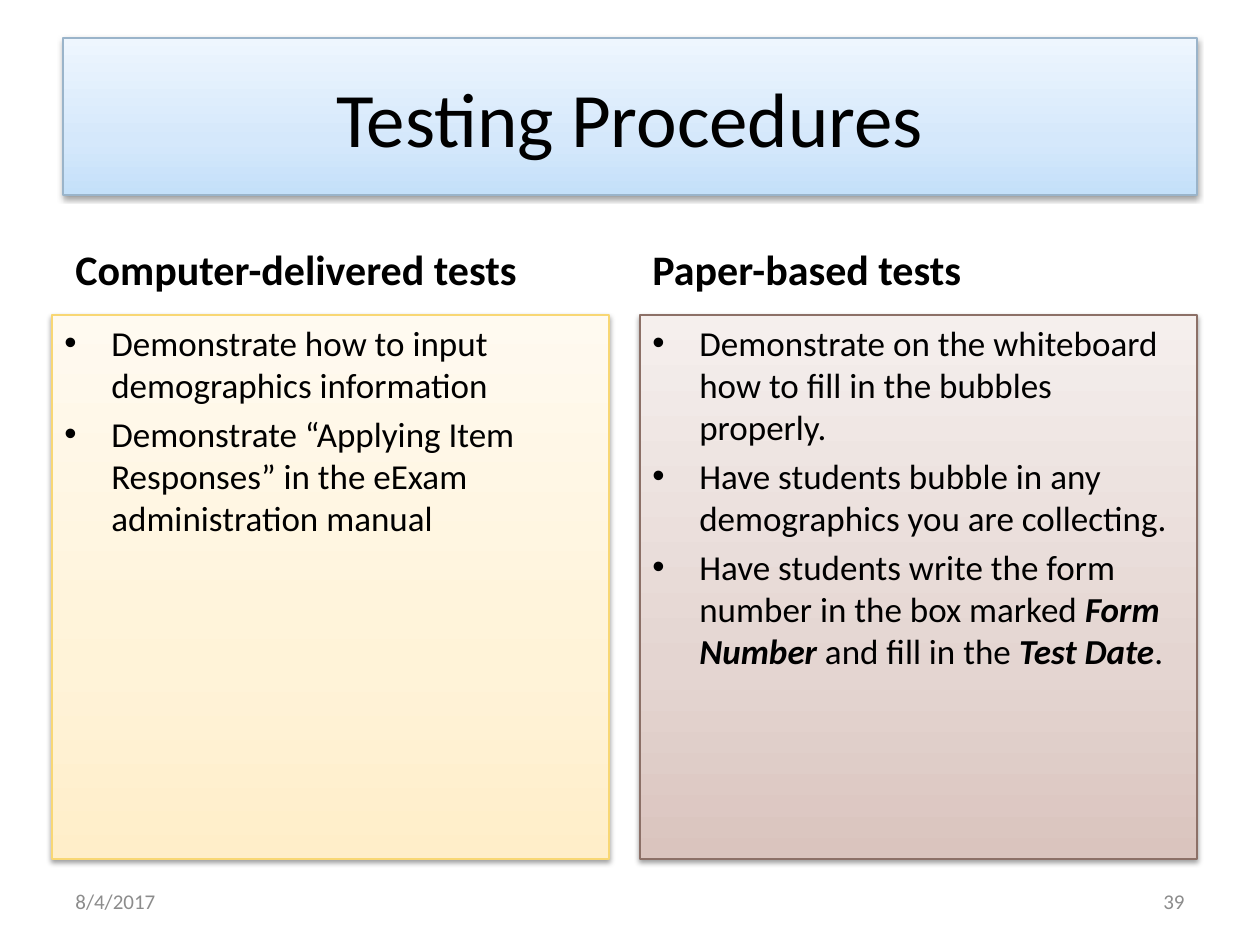
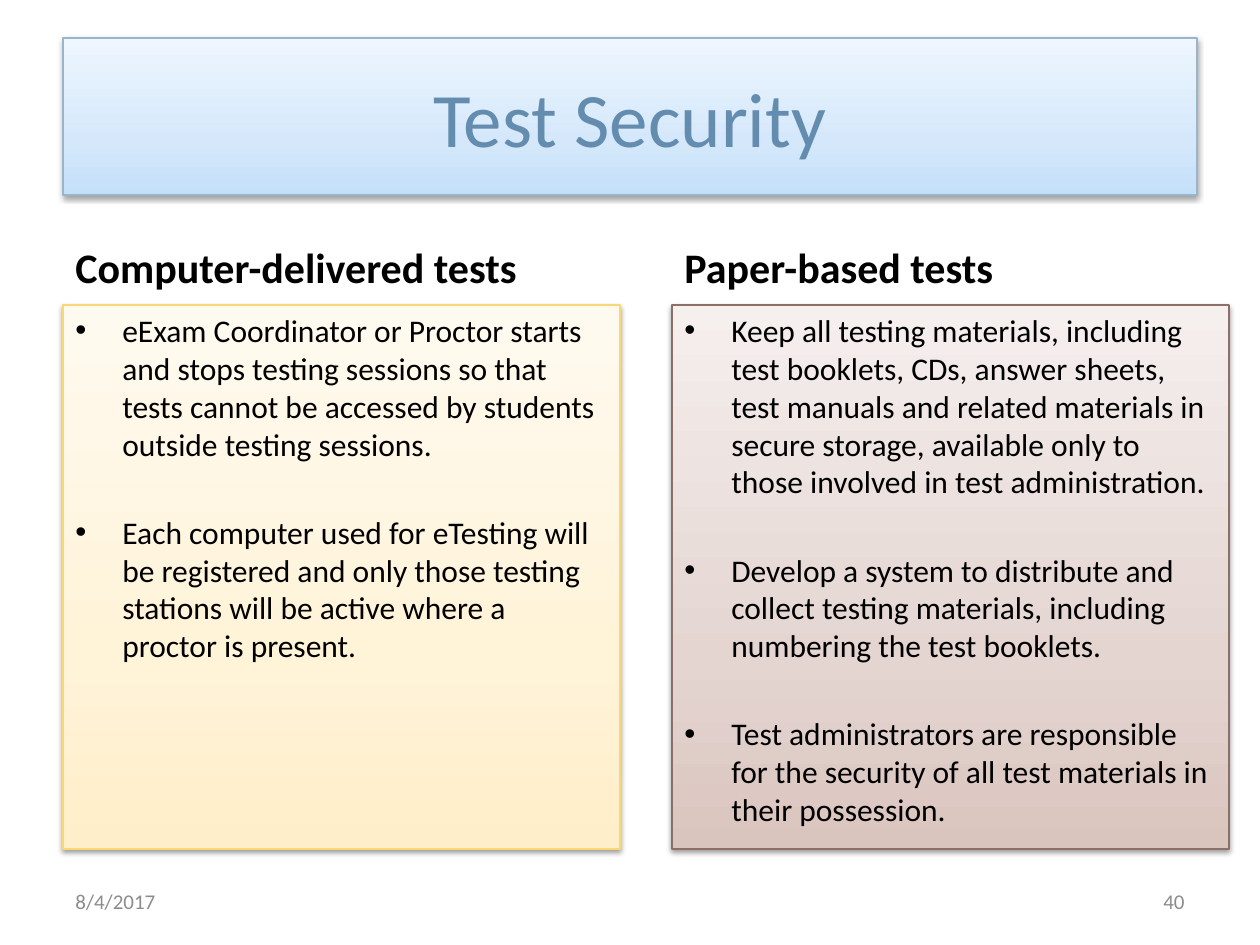
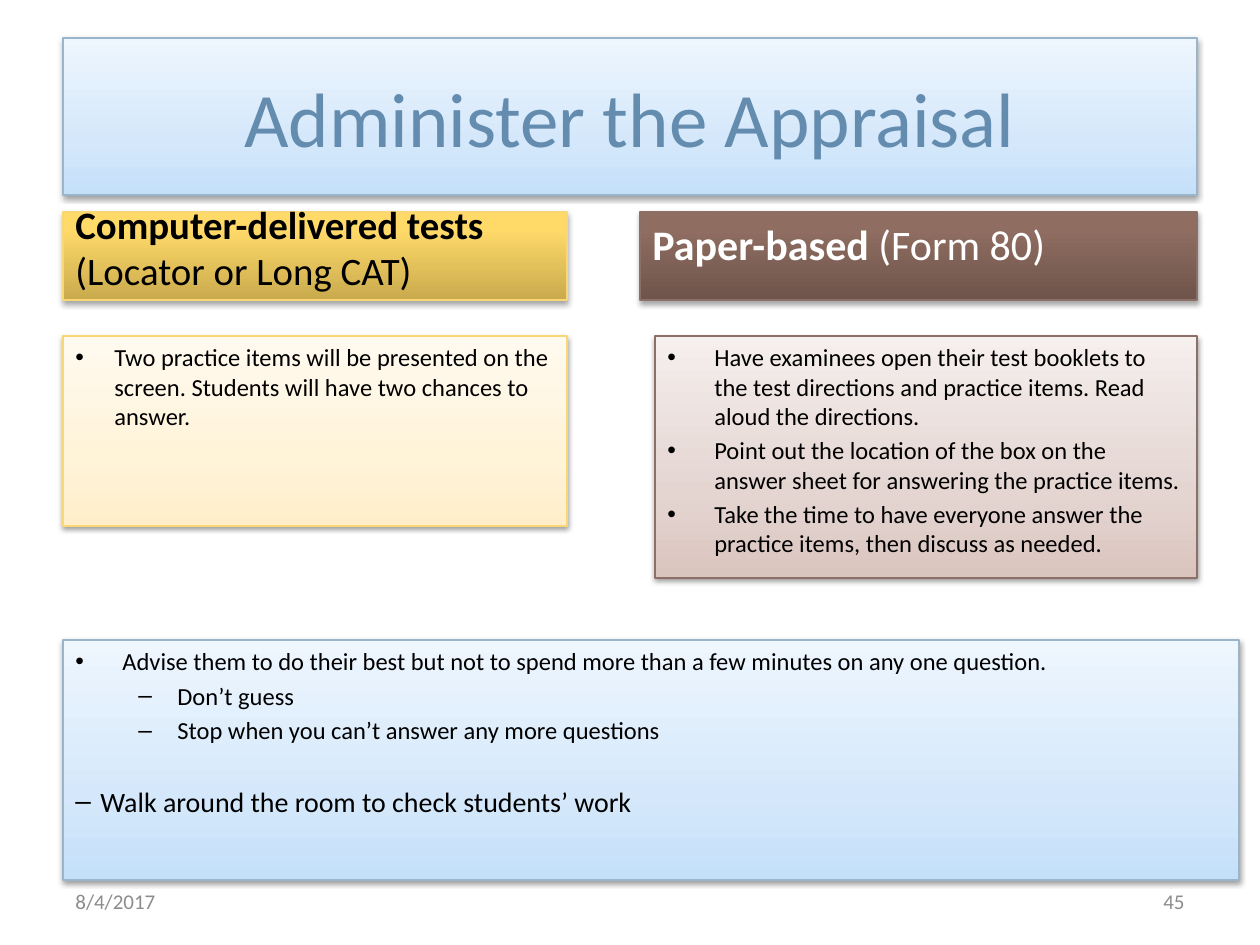
from copy import deepcopy
from dataclasses import dataclass

from lxml.etree import SubElement
from pptx import Presentation
from pptx.dml.color import RGBColor as Rgb
from pptx.enum.shapes import MSO_SHAPE as Shape
from pptx.enum.text import MSO_ANCHOR as Anchor, PP_ALIGN as Align
from pptx.oxml.ns import qn
from pptx.util import Emu, Pt


# Theme: colours, type sizes and paints shared by the slides
@dataclass(frozen=True)
class Paint:
    stops: tuple
    line: str
    fade: int = 38      # shadow opacity, percent
    drop: int = 20000   # shadow distance, EMU


def soft(line, *tones):
    return Paint(tuple(zip((0, .35, 1), tones)), line)


def deep(line, *tones):
    return Paint(tuple(zip((0, .8, 1), tones)), line, 35, 23000)


@dataclass(frozen=True)
class Theme:
    font: str = "Calibri"
    ink: str = "000000"
    white: str = "FFFFFF"
    steel: str = "638CAE"
    grey: str = "8C8C8C"
    title: int = 44
    head: int = 24
    foot: int = 12
    small: int = 14
    blue: Paint = soft("9AB4CA", "C4E0F9", "D5E8FB", "EEF6FE")
    cream: Paint = soft("F8D774", "FFEEC9", "FFF3D8", "FFFAF0")
    rose: Paint = soft("8C7067", "DAC4BE", "E4D5D1", "F5EFED")
    gold: Paint = deep("F8D774", "C9AA4D", "FFDA69", "FFDA6B")
    brown: Paint = deep("8C7067", "6E544B", "8F6D61", "906D61")


LOOK = Theme()
DATE = "8/4/2017"
LEFT, WIDE, COL = 63, 1134, 557
MARK = ("•", 47, 47)    # sign, text indent, hang
DASH = ("–", 102, 39)
SCREEN, PAPER = "Computer-delivered tests", "Paper-based tests"


def px(num):
    return Emu(round(num * 914400 / 126))


# Text: adds one paragraph; a run is a string or (string, "b", "i" or "bi")
def text(frame, *runs, size, color=LOOK.ink, align=Align.LEFT, mark=None,
         level=0, before=0):
    para = frame.add_paragraph() if frame.text else frame.paragraphs[0]
    para.alignment, para.level = align, level
    para.space_before = Pt(before)
    if mark:
        sign, indent, hang = mark
        props = para._p.get_or_add_pPr()
        props.set("marL", str(px(indent)))
        props.set("indent", str(-px(hang)))
        SubElement(props, qn("a:buFont"), typeface="Arial")
        SubElement(props, qn("a:buChar"), char=sign)
    for part in runs:
        words, style = (part, "") if isinstance(part, str) else part
        run = para.add_run()
        run.text = words
        font = run.font
        font.name, font.size = LOOK.font, Pt(size)
        font.bold, font.italic = "b" in style, "i" in style
        font.color.rgb = Rgb.from_string(color)


def bullets(frame, items, size, gap=None, mark=MARK):
    gap = size * .2 if gap is None else gap
    for num, item in enumerate(items):
        runs = (item,) if isinstance(item, str) else item
        text(frame, *runs, size=size, mark=mark, before=gap if num else 0)


# Boxes
def coat(shape, paint):
    fill = shape.fill
    fill.gradient()
    fill.gradient_angle = 90
    first = fill.gradient_stops[0]._gs
    first.addnext(deepcopy(first))
    for stop, (place, tone) in zip(fill.gradient_stops, paint.stops):
        stop.position = place
        stop.color.rgb = Rgb.from_string(tone)
    shape.line.color.rgb = Rgb.from_string(paint.line)
    shape.line.width = Pt(.75)
    shape.shadow.inherit = False
    glow = SubElement(shape._element.spPr.find(qn("a:effectLst")),
                      qn("a:outerShdw"), blurRad="40000", dist=str(paint.drop),
                      dir="5400000", rotWithShape="0")
    shade = SubElement(glow, qn("a:srgbClr"), val="000000")
    SubElement(shade, qn("a:alpha"), val=str(paint.fade * 1000))


def panel(slide, area, paint, anchor=Anchor.TOP):
    shape = slide.shapes.add_shape(Shape.RECTANGLE, *map(px, area))
    coat(shape, paint)
    frame = shape.text_frame
    frame.word_wrap, frame.vertical_anchor = True, anchor
    return frame


def label(slide, area, words, anchor, **form):
    frame = slide.shapes.add_textbox(*map(px, area)).text_frame
    frame.word_wrap, frame.vertical_anchor = True, anchor
    text(frame, words, **form)


def head(slide, left, top, words):
    label(slide, (left, top, COL, 88), (words, "b"), Anchor.BOTTOM,
          size=LOOK.head)


# Frame of every slide: title band, date and page number
def start(deck, name, page, color=LOOK.steel):
    slide = deck.slides.add_slide(deck.slide_layouts[5])
    title = slide.shapes.title
    title.left, title.top, title.width, title.height = map(
        px, (LEFT, 38, WIDE, 157))
    coat(title, LOOK.blue)
    title.text_frame.vertical_anchor = Anchor.MIDDLE
    text(title.text_frame, name, size=LOOK.title, color=color,
         align=Align.CENTER)
    for left, words, align in ((LEFT, DATE, Align.LEFT),
                               (903, str(page), Align.RIGHT)):
        label(slide, (left, 876, 294, 50), words, Anchor.MIDDLE,
              size=LOOK.foot, color=LOOK.grey, align=align)
    return slide


# Slides
def steps(deck):
    slide = start(deck, "Testing Procedures", 39, LOOK.ink)
    head(slide, LEFT, 212, SCREEN)
    head(slide, 640, 212, PAPER)
    bullets(panel(slide, (52, 315, COL, 544), LOOK.cream), (
        "Demonstrate how to input demographics information",
        "Demonstrate “Applying Item Responses” in the eExam "
        "administration manual"), 20)
    bullets(panel(slide, (640, 315, COL, 544), LOOK.rose), (
        "Demonstrate on the whiteboard how to fill in the bubbles properly.",
        "Have students bubble in any demographics you are collecting.",
        ("Have students write the form number in the box marked ",
         ("Form Number", "bi"), " and fill in the ", ("Test Date", "bi"),
         ".")), 20)


def safety(deck):
    slide = start(deck, "Test Security", 40)
    head(slide, LEFT, 210, SCREEN)
    head(slide, 672, 210, PAPER)
    bullets(panel(slide, (LEFT, 305, COL, 544), LOOK.cream), (
        "eExam Coordinator or Proctor starts and stops testing sessions so "
        "that tests cannot be accessed by students outside testing sessions.",
        "Each computer used for eTesting will be registered and only those "
        "testing stations will be active where a proctor is present."),
        18, 28.8)
    bullets(panel(slide, (672, 305, COL, 544), LOOK.rose), (
        "Keep all testing materials, including test booklets, CDs, answer "
        "sheets, test manuals and related materials in secure storage, "
        "available only to those involved in test administration.",
        "Develop a system to distribute and collect testing materials, "
        "including numbering the test booklets.",
        "Test administrators are responsible for the security of all test "
        "materials in their possession."), 18, 28.8)


def survey(deck):
    slide = start(deck, "Administer the Appraisal", 45)
    text(panel(slide, (LEFT, 212, 504, 88), LOOK.gold, Anchor.BOTTOM),
         ("Computer-delivered tests ", "b"), "(Locator or Long CAT)",
         size=22.2)
    text(panel(slide, (640, 212, COL, 88), LOOK.brown),
         ("Paper-based ", "b"), "(Form 80)", size=LOOK.head, color=LOOK.white)
    bullets(panel(slide, (LEFT, 336, 504, 190), LOOK.cream), (
        "Two practice items will be presented on the screen. Students will "
        "have two chances to answer.",), LOOK.small, mark=("•", 39, 39))
    bullets(panel(slide, (655, 336, 542, 242), LOOK.rose), (
        "Have examinees open their test booklets to the test directions and "
        "practice items. Read aloud the directions.",
        "Point out the location of the box on the answer sheet for answering "
        "the practice items.",
        "Take the time to have everyone answer the practice items, then "
        "discuss as needed."), LOOK.small)
    advice = panel(slide, (LEFT, 640, 1176, 240), LOOK.blue)
    bullets(advice, (
        "Advise them to do their best but not to spend more than a few "
        "minutes on any one question.",), LOOK.small)
    for words in ("Don’t guess", "Stop when you can’t answer any more questions"):
        text(advice, words, size=LOOK.small, mark=DASH, level=1, before=2.8)
    text(advice, "Walk around the room to check students’ work", size=16,
         mark=("–", 25, 25), level=1, before=23)


def main():
    deck = Presentation()
    deck.slide_width, deck.slide_height = px(1260), px(945)
    for build in (steps, safety, survey):
        build(deck)
    deck.save("out.pptx")


if __name__ == "__main__":
    main()
